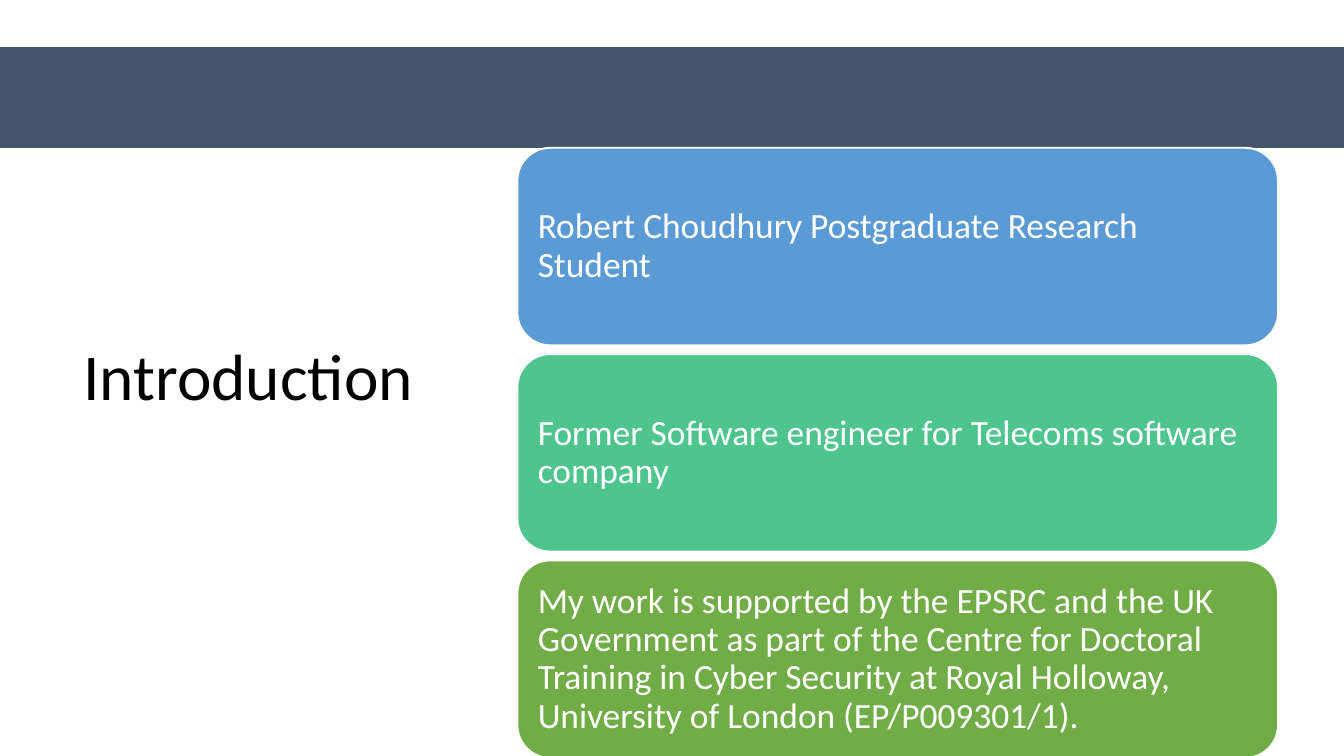
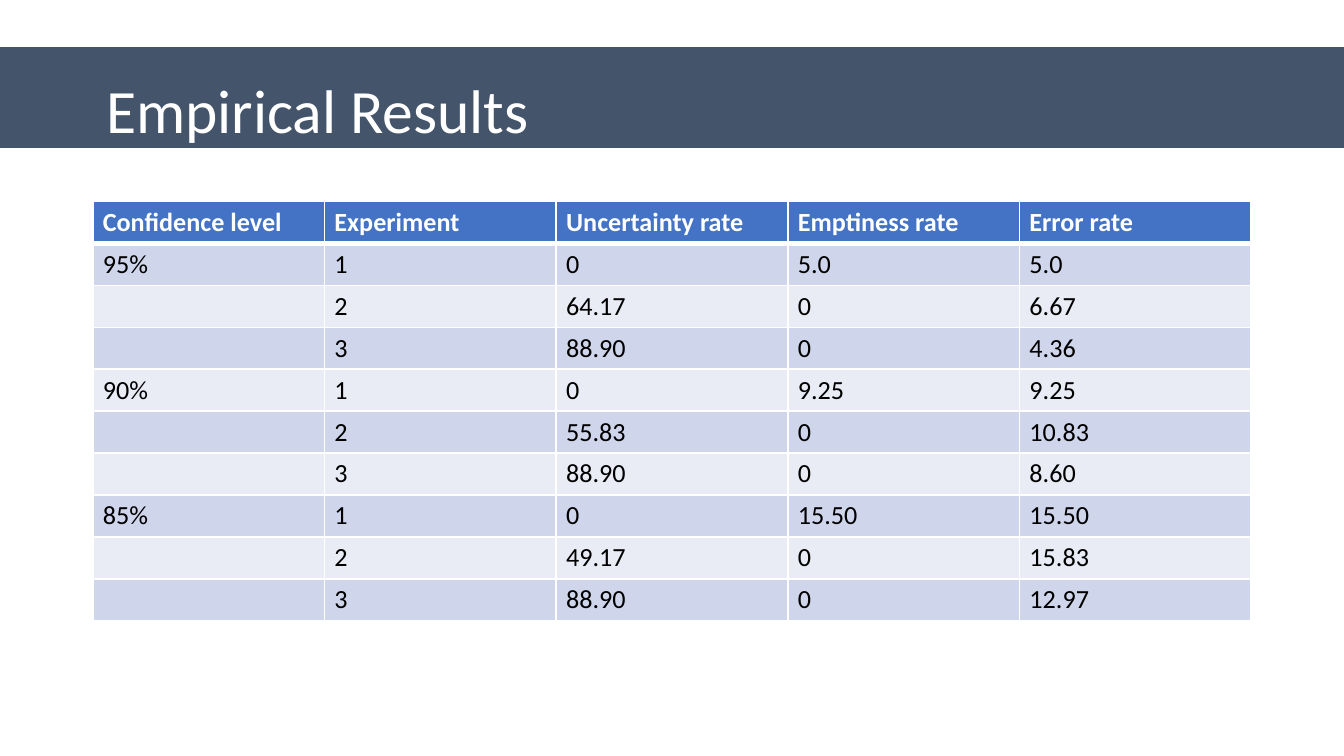
import pptx
import pptx.dml.color
import pptx.enum.shapes
import pptx.enum.text
import pptx.oxml.ns
import pptx.util
from dataclasses import dataclass
from lxml import etree

Inches = pptx.util.Inches
Pt = pptx.util.Pt
qn = pptx.oxml.ns.qn
MIDDLE = pptx.enum.text.MSO_ANCHOR.MIDDLE
LEFT = pptx.enum.text.PP_ALIGN.LEFT
PRESET = pptx.enum.shapes.MSO_SHAPE

CARDS = [
    ("Robert Choudhury Postgraduate Research Student", "5B9BD5"),
    ("Former Software engineer for Telecoms software company", "4DC58D"),
    ("My work is supported by the EPSRC and the UK Government as part of "
     "the Centre for Doctoral Training in Cyber Security at Royal Holloway, "
     "University of London (EP/P009301/1).", "70AD47"),
]
HEADS = ["Confidence level", "Experiment", "Uncertainty rate",
         "Emptiness rate", "Error rate"]
RATES = {
    "95%": [("0", "5.0", "5.0"), ("64.17", "0", "6.67"),
            ("88.90", "0", "4.36")],
    "90%": [("0", "9.25", "9.25"), ("55.83", "0", "10.83"),
            ("88.90", "0", "8.60")],
    "85%": [("0", "15.50", "15.50"), ("49.17", "0", "15.83"),
            ("88.90", "0", "12.97")],
}


@dataclass(frozen=True)
class Theme:
    font: str = "Calibri"
    white: str = "FFFFFF"
    black: str = "000000"
    band: str = "44546A"
    head: str = "4472C4"
    rows: tuple = ("CFD5EA", "E9EBF5")
    intro: int = 35
    title: int = 33
    card: int = 19
    cell: int = 14


THEME = Theme()


def rgb(code):
    return pptx.dml.color.RGBColor.from_string(code)


def paint(part, code):
    part.fill.solid()
    part.fill.fore_color.rgb = rgb(code)


def style(para, size, color, bold=False):
    para.alignment = LEFT
    font = para.font
    font.name, font.size, font.bold = THEME.font, Pt(size), bold
    font.color.rgb = rgb(color)


def inset(part, side, end):
    part.margin_left = part.margin_right = side
    part.margin_top = part.margin_bottom = end


def add_box(slide, preset, box, fill):
    shape = slide.shapes.add_shape(preset, *map(Inches, box))
    shape.shadow.inherit = False
    paint(shape, fill)
    return shape


def add_text(shape, text, size, color, side):
    frame = shape.text_frame
    frame.word_wrap = True
    frame.auto_size = pptx.enum.text.MSO_AUTO_SIZE.NONE
    frame.vertical_anchor = MIDDLE
    inset(frame, Inches(side), Inches(0.05))
    frame.text = text
    para = frame.paragraphs[0]
    para.line_spacing = 0.9
    style(para, size, color)


def add_slide(deck, title, box, size, color):
    slide = deck.slides.add_slide(deck.slide_layouts[5])
    shape = slide.shapes.title
    shape.left, shape.top, shape.width, shape.height = map(Inches, box)
    add_text(shape, title, size, color, 0.1)
    return slide


def add_band(deck, slide):
    """Draw the band, then move it to the master so that all slides show it."""
    band = add_box(slide, PRESET.RECTANGLE, (0, 0.35, 10, 0.75), THEME.band)
    band.line.fill.background()
    node = band._element
    node.nvSpPr.cNvPr.set("id", "99")
    deck.slide_master.shapes._spTree.insert(2, node)


def add_cards(slide):
    left, top, last, width, height = 3.85, 1.1, 4.17, 5.66, 1.47
    step = (last - top) / (len(CARDS) - 1)
    for i, (text, fill) in enumerate(CARDS):
        box = (left, top + i * step, width, height)
        card = add_box(slide, PRESET.ROUNDED_RECTANGLE, box, fill)
        card.line.color.rgb = rgb(THEME.white)
        card.line.width = Pt(1)
        add_text(card, text, THEME.card, THEME.white, 0.08)


def add_edges(cell, top, base):
    prop = cell._tc.get_or_add_tcPr()
    for side, width in (("L", 1), ("R", 1), ("T", top), ("B", base)):
        line = etree.SubElement(prop, qn("a:ln" + side), w=str(Pt(width)))
        fill = etree.SubElement(line, qn("a:solidFill"))
        etree.SubElement(fill, qn("a:srgbClr"), val=THEME.white)


def add_rates(slide):
    rows = [HEADS]
    for level, runs in RATES.items():
        for i, rates in enumerate(runs):
            rows.append(["" if i else level, str(i + 1), *rates])
    box = map(Inches, (0.69, 1.5, 8.62, 3.08))
    table = slide.shapes.add_table(len(rows), len(HEADS), *box).table
    table.horz_banding = False
    for r, row in enumerate(rows):
        head = r == 0
        fill = THEME.head if head else THEME.rows[(r - 1) % 2]
        color = THEME.white if head else THEME.black
        for c, text in enumerate(row):
            cell = table.cell(r, c)
            add_edges(cell, 3 if r == 1 else 1, 3 if head else 1)
            paint(cell, fill)
            inset(cell, Pt(5.4), Pt(2.7))
            cell.text = text
            para = cell.text_frame.paragraphs[0]
            style(para, THEME.cell, color, head)
            if not text:
                etree.SubElement(para._p, qn("a:endParaRPr"),
                                 sz=str(THEME.cell * 100))


def main():
    deck = pptx.Presentation()
    deck.slide_width = Inches(10)
    deck.slide_height = deck.slide_width * 9 // 16
    intro = add_slide(deck, "Introduction", (0.52, 0.53, 2.8, 4.58),
                      THEME.intro, THEME.black)
    add_band(deck, intro)
    add_cards(intro)
    results = add_slide(deck, "Empirical Results", (0.69, 0.3, 8.62, 1.09),
                        THEME.title, THEME.white)
    add_rates(results)
    deck.save("out.pptx")


if __name__ == "__main__":
    main()
